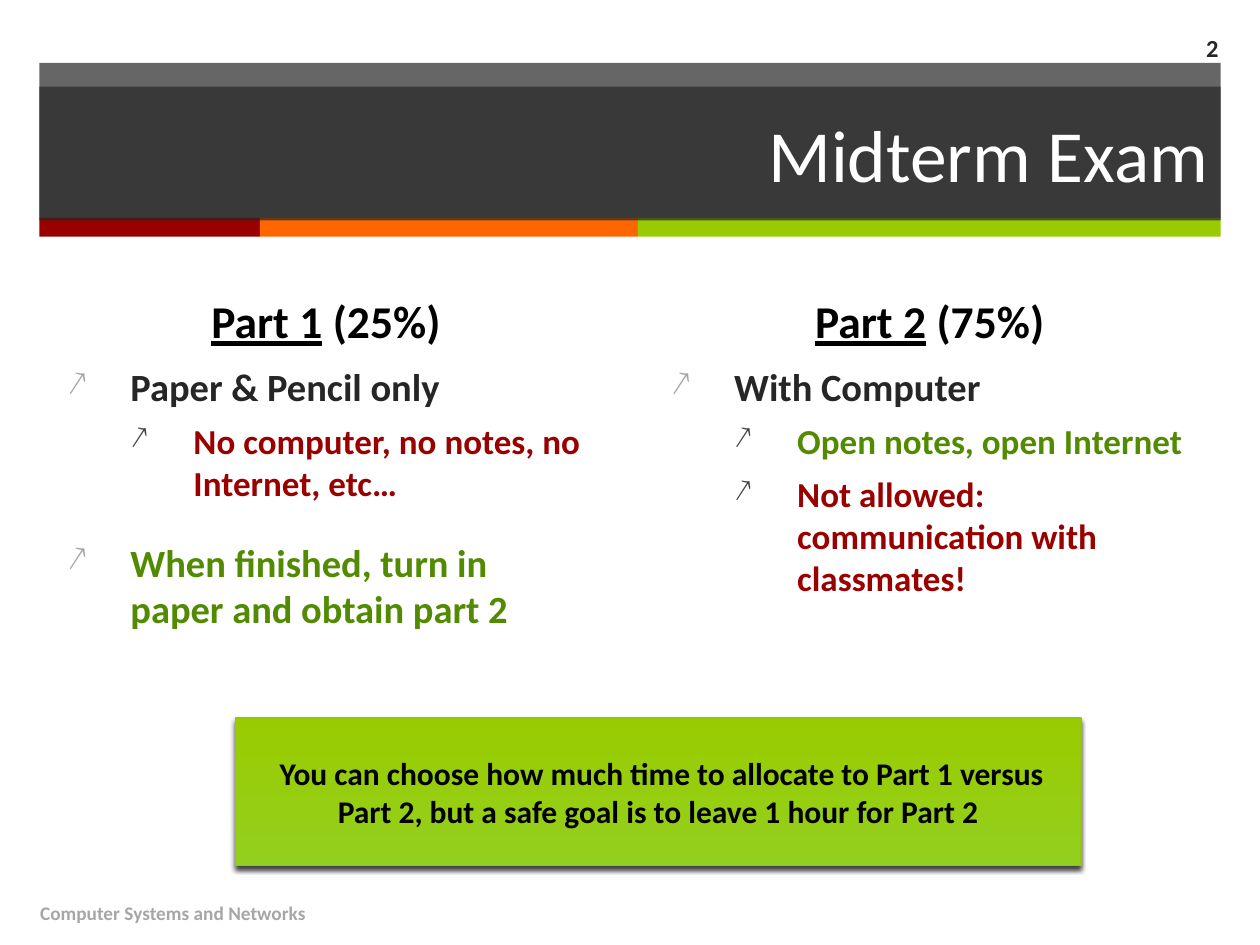
from dataclasses import dataclass

from lxml import etree
from pptx import Presentation
from pptx.dml.color import RGBColor
from pptx.enum.shapes import MSO_SHAPE
from pptx.enum.text import MSO_ANCHOR, PP_ALIGN
from pptx.oxml import parse_xml
from pptx.oxml.ns import nsdecls, qn
from pptx.util import Pt

RECTANGLE = MSO_SHAPE.RECTANGLE
TOP, MIDDLE, BOTTOM = MSO_ANCHOR.TOP, MSO_ANCHOR.MIDDLE, MSO_ANCHOR.BOTTOM
LEFT, CENTER, RIGHT = PP_ALIGN.LEFT, PP_ALIGN.CENTER, PP_ALIGN.RIGHT

FONT = "Calibri"
BLACK = RGBColor(0x00, 0x00, 0x00)
WHITE = RGBColor(0xFF, 0xFF, 0xFF)
CHARCOAL = RGBColor(0x26, 0x26, 0x26)
DARK_GRAY = RGBColor(0x40, 0x40, 0x40)
LIGHT_GRAY = RGBColor(0xA6, 0xA6, 0xA6)
RED = RGBColor(0x99, 0x00, 0x00)
ORANGE = RGBColor(0xFF, 0x66, 0x00)
LIME = RGBColor(0x99, 0xCC, 0x00)
LIME_EDGE = RGBColor(0x96, 0xC8, 0x00)
LIME_SHADE = RGBColor(0x93, 0xCF, 0x1E)
GREEN = RGBColor(0x52, 0x8A, 0x02)

BAND_LEFT, BAND_WIDTH = 22.5, 675
COLUMN_WIDTH = 309.6


@dataclass
class Box:
    left: float
    top: float
    width: float
    height: float

    def lengths(self) -> list:
        return [Pt(v) for v in (self.left, self.top, self.width, self.height)]


@dataclass
class Level:
    size: float
    indent: float
    space_before: float
    bullet_color: RGBColor


@dataclass
class Item:
    text: str
    color: RGBColor
    level: int = 0


@dataclass
class Part:
    left: float
    name: str
    share: str
    items: list[Item]


LEVELS = [Level(22, 36, 20, LIGHT_GRAY), Level(20, 72, 6, DARK_GRAY)]

PARTS = [
    Part(31.5, "Part 1", " (25%)", [
        Item("Paper & Pencil only", CHARCOAL),
        Item("No computer, no notes, no Internet, etc…", RED, 1),
        Item("When finished, turn in paper and obtain part 2", GREEN),
    ]),
    Part(376.5, "Part 2", " (75%)", [
        Item("With Computer", CHARCOAL),
        Item("Open notes, open Internet", GREEN, 1),
        Item("Not allowed: communication with classmates!", RED, 1),
    ]),
]


def style(run, size: float, color: RGBColor, bold: bool = True) -> None:
    run.font.name = FONT
    run.font.size = Pt(size)
    run.font.bold = bold
    run.font.color.rgb = color


def add_bar(slide, box: Box, color: RGBColor, opacity: int = 100):
    bar = slide.shapes.add_shape(RECTANGLE, *box.lengths())
    bar.shadow.inherit = False
    bar.line.fill.background()
    bar.fill.solid()
    bar.fill.fore_color.rgb = color
    if opacity < 100:
        tint = bar.fill._xPr.find(f".//{qn('a:srgbClr')}")
        etree.SubElement(tint, qn("a:alpha"), val=str(opacity * 1000))
    return bar


def add_text_frame(slide, box: Box, anchor):
    frame = slide.shapes.add_textbox(*box.lengths()).text_frame
    frame.word_wrap = True
    frame.vertical_anchor = anchor
    return frame


def write_line(frame, text: str, size: float, color: RGBColor, align,
               bold: bool = True) -> None:
    frame.text = text
    frame.vertical_anchor = MIDDLE
    line = frame.paragraphs[0]
    line.alignment = align
    style(line.runs[0], size, color, bold)


def write_item(paragraph, item: Item) -> None:
    level = LEVELS[item.level]
    paragraph.text = item.text
    paragraph.level = item.level
    paragraph.alignment = LEFT
    paragraph.space_before = Pt(level.space_before)
    style(paragraph.runs[0], level.size, item.color)
    props = paragraph._p.get_or_add_pPr()
    props.set("marL", str(Pt(level.indent)))
    props.set("indent", str(Pt(-36)))
    bullet_color = etree.SubElement(props, qn("a:buClr"))
    etree.SubElement(bullet_color, qn("a:srgbClr"), val=str(level.bullet_color))
    etree.SubElement(props, qn("a:buSzPct"), val="90000")
    etree.SubElement(props, qn("a:buChar"), char="↗")


def add_part(slide, part: Part) -> None:
    heading = add_text_frame(
        slide, Box(part.left, 136.8, COLUMN_WIDTH, 65.5), BOTTOM).paragraphs[0]
    heading.alignment = CENTER
    heading.space_before = Pt(6)
    for text, underlined in ((part.name, True), (part.share, False)):
        run = heading.add_run()
        run.text = text
        style(run, 26, BLACK)
        run.font.underline = underlined

    body = add_text_frame(
        slide, Box(part.left, 203.8, COLUMN_WIDTH, 278.6), TOP)
    for index, item in enumerate(part.items):
        write_item(body.add_paragraph() if index else body.paragraphs[0], item)


def add_callout(slide, box: Box, text: str) -> None:
    callout = add_bar(slide, box, LIME)
    callout.fill.gradient()
    callout.fill.gradient_angle = 90
    for stop, color in zip(callout.fill.gradient_stops, (LIME_SHADE, LIME)):
        stop.color.rgb = color
    for stop, position in zip(callout.fill.gradient_stops, (0, 1)):
        stop.position = position
    callout.line.color.rgb = LIME_EDGE
    callout.line.width = Pt(1)
    effects = callout._element.spPr.find(qn("a:effectLst"))
    effects.append(parse_xml(
        f'<a:outerShdw {nsdecls("a")} blurRad="{Pt(3)}" dist="{Pt(2)}" '
        f'dir="{110 * 60000}" algn="ctr" rotWithShape="0">'
        f'<a:srgbClr val="{BLACK}"><a:alpha val="75000"/></a:srgbClr>'
        '</a:outerShdw>'))
    callout.text_frame.word_wrap = True
    write_line(callout.text_frame, text, 18, BLACK, CENTER)


def main() -> None:
    deck = Presentation()
    deck.slide_width, deck.slide_height = Pt(720), Pt(540)
    slide = deck.slides.add_slide(deck.slide_layouts[6])

    # Header band with its coloured strips
    add_bar(slide, Box(BAND_LEFT, 36, BAND_WIDTH, 89), CHARCOAL, 70)
    strip_left = BAND_LEFT
    for width, color in ((126, RED), (216, ORANGE), (333, LIME)):
        add_bar(slide, Box(strip_left, 124.5, width, 10.8), color)
        strip_left += width

    # Title
    title = add_bar(slide, Box(BAND_LEFT, 49.5, BAND_WIDTH, 76.5), CHARCOAL, 70)
    title.text_frame.word_wrap = True
    write_line(title.text_frame, "Midterm Exam", 42, WHITE, RIGHT, bold=False)

    # The two exam parts
    for part in PARTS:
        add_part(slide, part)

    # Footer and slide number
    footer = add_text_frame(slide, Box(15.84, 507, 482.4, 28.8), MIDDLE)
    write_line(footer, "Computer Systems and Networks", 11, LIGHT_GRAY, LEFT)
    number = add_text_frame(slide, Box(653.76, 13, 49.7, 28), MIDDLE)
    write_line(number, "2", 14, CHARCOAL, RIGHT)

    # Advice on time
    add_callout(slide, Box(134.64, 410.4, 483.1, 84.2),
                " You can choose how much time to allocate to Part 1 versus "
                "Part 2, but a safe goal is to leave 1 hour for Part 2")

    deck.save("out.pptx")


if __name__ == "__main__":
    main()
